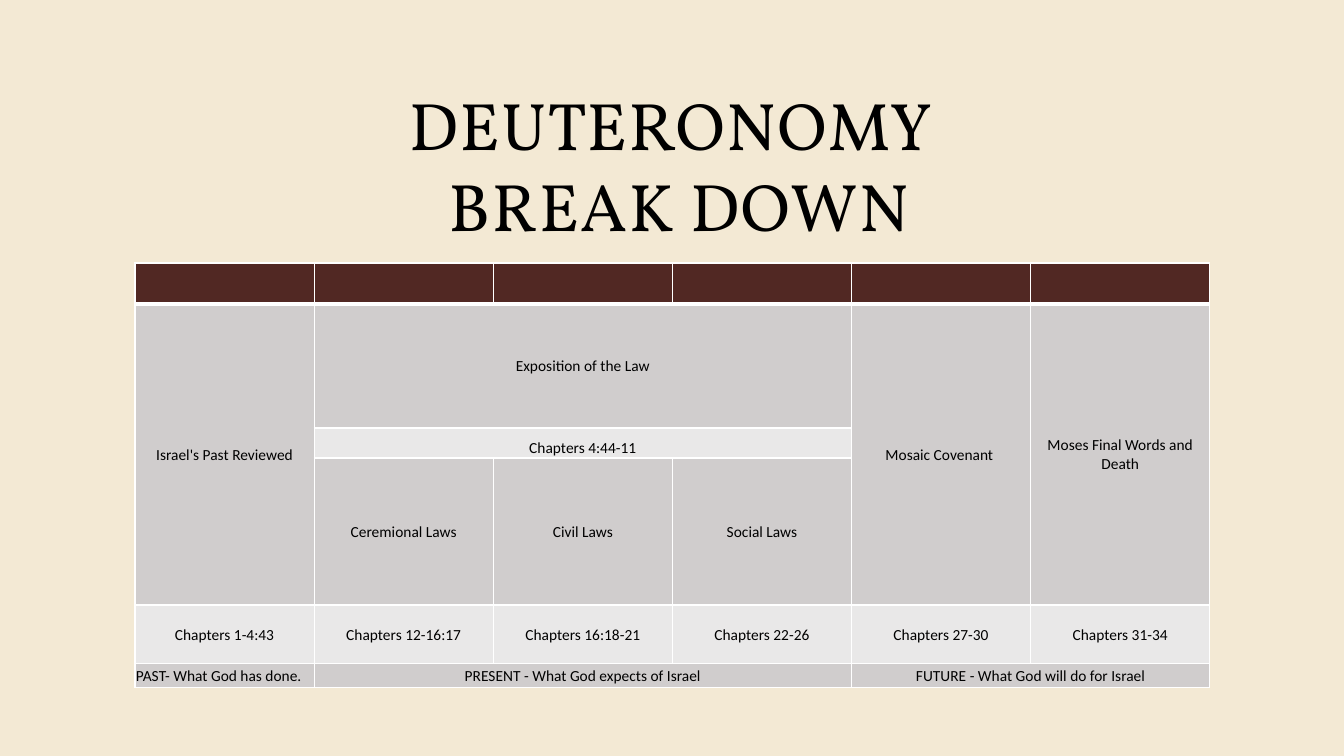
from lxml import etree
from pptx import Presentation
from pptx.dml.color import RGBColor
from pptx.enum.text import MSO_ANCHOR, PP_ALIGN
from pptx.oxml.ns import qn
from pptx.util import Pt

LEFT, CENTER = PP_ALIGN.LEFT, PP_ALIGN.CENTER
MIDDLE, BOTTOM = MSO_ANCHOR.MIDDLE, MSO_ANCHOR.BOTTOM

SLIDE_W, SLIDE_H = 1344, 756
EMU_PER_PX = 12192000 / SLIDE_W

COLORS = {
    "background": "F3E9D4",
    "header": "512823",
    "dark_band": "D0CDCD",
    "light_band": "E9E8E8",
    "border": "FFFFFF",
    "text": "000000",
}

TITLE_FORMAT = {"name": "Vollkorn", "size": Pt(48), "bold": False}
CELL_FORMAT = {"name": "Calibri", "size": Pt(11), "bold": False}
CELL_LAYOUT = {"margin_left": 1, "margin_right": 1, "margin_top": 1, "margin_bottom": 0}

COLUMN_COUNT = 6
ROW_HEIGHTS = [41, 124, 30, 147, 59, 24]
ROW_FILLS = ["header", "dark_band", "light_band", "dark_band", "light_band", "dark_band"]

# (row, column, rows spanned, columns spanned, text)
ENTRIES = [
    (1, 0, 3, 1, "Israel's Past Reviewed"),
    (1, 1, 1, 3, "Exposition of the Law"),
    (1, 4, 3, 1, "Mosaic Covenant "),
    (1, 5, 3, 1, "Moses Final Words and Death"),
    (2, 1, 1, 3, "Chapters 4:44-11"),
    (3, 1, 1, 1, "Ceremional Laws"),
    (3, 2, 1, 1, "Civil Laws"),
    (3, 3, 1, 1, "Social Laws"),
    (4, 0, 1, 1, "Chapters 1-4:43"),
    (4, 1, 1, 1, "Chapters 12-16:17"),
    (4, 2, 1, 1, "Chapters 16:18-21"),
    (4, 3, 1, 1, "Chapters 22-26"),
    (4, 4, 1, 1, "Chapters 27-30"),
    (4, 5, 1, 1, "Chapters 31-34"),
    (5, 0, 1, 1, "PAST- What God has done."),
    (5, 1, 1, 3, "PRESENT - What God expects of Israel"),
    (5, 4, 1, 2, "FUTURE - What God will do for Israel"),
]


def px(length):
    return round(length * EMU_PER_PX)


def color(name):
    return RGBColor.from_string(COLORS[name])


def add_run(paragraph, text, font_format):
    run = paragraph.add_run()
    run.text = text
    for attribute, value in font_format.items():
        setattr(run.font, attribute, value)
    run.font.color.rgb = color("text")
    return run


def set_borders(cell, widths):
    """Put border lines, given in points by side, ahead of the cell's fill."""
    properties = cell._tc.get_or_add_tcPr()
    for position, (side, width) in enumerate(widths.items()):
        line = etree.Element(qn(f"a:ln{side}"), w=str(Pt(width)))
        fill = etree.SubElement(line, qn("a:solidFill"))
        etree.SubElement(fill, qn("a:srgbClr"), val=COLORS["border"])
        properties.insert(position, line)


def add_title(slide, left, top, width, height):
    frame = slide.shapes.add_textbox(px(left), px(top), px(width), px(height)).text_frame
    frame.word_wrap = True
    frame.vertical_anchor = BOTTOM
    heading = frame.paragraphs[0]
    heading.alignment = CENTER
    heading.line_spacing = Pt(58)
    first_line = add_run(heading, "DEUTERONOMY", TITLE_FORMAT)
    heading.add_line_break()
    second_line = add_run(heading, " BREAK DOWN", TITLE_FORMAT)
    for line in (first_line, second_line):
        line._r.get_or_add_rPr().set("spc", "100")


def add_breakdown(slide, left, top, width):
    table = slide.shapes.add_table(
        len(ROW_HEIGHTS), COLUMN_COUNT, px(left), px(top), px(width), px(sum(ROW_HEIGHTS))
    ).table
    for column in table.columns:
        column.width = px(width / COLUMN_COUNT)

    # Bands, borders and margins
    for row_index, (height, band) in enumerate(zip(ROW_HEIGHTS, ROW_FILLS)):
        table.rows[row_index].height = px(height)
        widths = {
            "L": 1,
            "R": 1,
            "T": 3 if row_index == 1 else 1,
            "B": 3 if row_index == 0 else 1,
        }
        for cell in table.rows[row_index].cells:
            cell.fill.solid()
            cell.fill.fore_color.rgb = color(band)
            set_borders(cell, widths)
            for attribute, margin in CELL_LAYOUT.items():
                setattr(cell, attribute, px(margin))
            cell.text_frame.paragraphs[0]._p.get_or_add_endParaRPr().set("sz", "1100")

    # Merged cells and wording
    for row, column, row_span, column_span, text in ENTRIES:
        cell = table.cell(row, column)
        if row_span * column_span > 1:
            cell.merge(table.cell(row + row_span - 1, column + column_span - 1))
        cell.vertical_anchor = BOTTOM if row == 2 else MIDDLE
        paragraph = cell.text_frame.paragraphs[0]
        paragraph.alignment = LEFT if (row, column) == (5, 0) else CENTER
        add_run(paragraph, text, CELL_FORMAT)


def main():
    presentation = Presentation()
    presentation.slide_width, presentation.slide_height = px(SLIDE_W), px(SLIDE_H)
    slide = presentation.slides.add_slide(presentation.slide_layouts[6])
    slide.background.fill.solid()
    slide.background.fill.fore_color.rgb = color("background")
    add_title(slide, 134, 71, 1075, 179)
    add_breakdown(slide, 135, 263, 1075)
    presentation.save("out.pptx")


if __name__ == "__main__":
    main()
